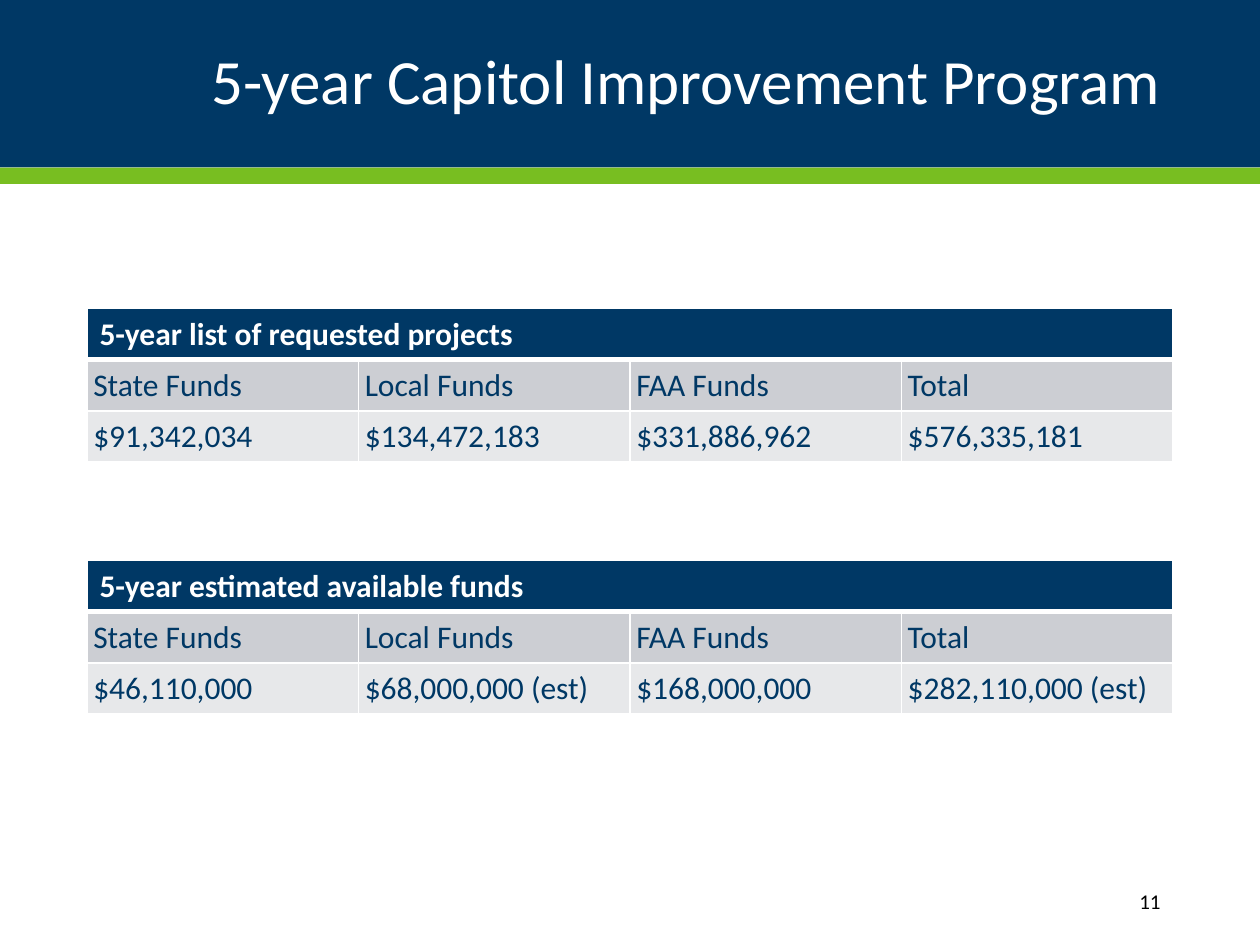
from lxml.etree import SubElement
from pptx import Presentation
from pptx.dml.color import RGBColor
from pptx.enum.shapes import MSO_SHAPE as SHAPE
from pptx.enum.text import MSO_ANCHOR as ANCHOR, PP_ALIGN as ALIGN
from pptx.oxml.ns import qn
from pptx.util import Inches, Pt

COLORS = {"navy": "003865", "green": "78BE21", "white": "FFFFFF",
          "label": "CCCED3", "amount": "E7E8EA", "black": "000000"}
FONT = "Calibri"
WIDTH, HEIGHT = 10, 7.5
MARGIN = 0.69
CONTENT_W = WIDTH - 2 * MARGIN
ROW_H = 0.4
LABELS = ["State Funds", "Local Funds", "FAA Funds", "Total"]
FUND_TABLES = [
    (2.45, "5-year list of requested projects",
     ["$91,342,034", "$134,472,183", "$331,886,962", "$576,335,181"]),
    (4.45, "5-year estimated available funds",
     ["$46,110,000", "$68,000,000 (est)", "$168,000,000", "$282,110,000 (est)"]),
]


def rgb(name):
    return RGBColor.from_string(COLORS[name])


def set_text(tf, text, size, color, bold=False, align=ALIGN.LEFT):
    tf.text = text
    p = tf.paragraphs[0]
    p.alignment = align
    font = p.runs[0].font
    font.name, font.size, font.bold = FONT, Pt(size), bold
    font.color.rgb = rgb(color)
    return p


def add_band(slide, top, height, color):
    s = slide.shapes.add_shape(SHAPE.RECTANGLE, 0, Inches(top),
                               Inches(WIDTH), Inches(height))
    s.shadow.inherit = False
    s.fill.solid()
    s.fill.fore_color.rgb = rgb(color)
    s.line.fill.background()


def set_title(slide, text):
    title = slide.shapes.title
    title.left, title.top = Inches(MARGIN), Inches(0.17)
    title.width, title.height = Inches(CONTENT_W), Inches(1)
    title.text_frame.vertical_anchor = ANCHOR.MIDDLE
    p = set_text(title.text_frame, text, 36, "white", align=ALIGN.RIGHT)
    p.line_spacing = 0.9
    # Bring the title in front of the bands
    slide.shapes._spTree.append(title._element)


def set_borders(cell, top=1, bottom=1):
    tc_pr = cell._tc.get_or_add_tcPr()
    for side, width in (("L", 1), ("R", 1), ("T", top), ("B", bottom)):
        ln = SubElement(tc_pr, qn(f"a:ln{side}"), w=str(Pt(width)))
        fill = SubElement(ln, qn("a:solidFill"))
        SubElement(fill, qn("a:srgbClr"), val=COLORS["white"])


def format_cell(cell, fill):
    cell.fill.solid()
    cell.fill.fore_color.rgb = rgb(fill)


def add_fund_table(slide, top, heading, amounts):
    table = slide.shapes.add_table(3, len(LABELS), Inches(MARGIN), Inches(top),
                                   Inches(CONTENT_W), Inches(3 * ROW_H)).table
    # Heading across all columns
    table.cell(0, 0).merge(table.cell(0, len(LABELS) - 1))
    set_text(table.cell(0, 0).text_frame, heading, 18, "white", bold=True)
    for cell in table.rows[0].cells:
        set_borders(cell, bottom=3)
        format_cell(cell, "navy")
    # Labels and amounts
    for row, (texts, fill) in enumerate([(LABELS, "label"), (amounts, "amount")], 1):
        for col, text in enumerate(texts):
            cell = table.cell(row, col)
            cell.margin_left = cell.margin_right = Inches(0.05)
            cell.margin_top = cell.margin_bottom = Inches(0.05)
            set_text(cell.text_frame, text, 18, "navy")
            set_borders(cell, top=3 if row == 1 else 1)
            format_cell(cell, fill)


def add_page_number(slide, number):
    width = 1.2
    box = slide.shapes.add_textbox(Inches(WIDTH - MARGIN - width), Inches(6.95),
                                   Inches(width), Inches(0.4))
    tf = box.text_frame
    tf.word_wrap = True
    tf.vertical_anchor = ANCHOR.MIDDLE
    set_text(tf, number, 12, "black", align=ALIGN.RIGHT)


def main():
    prs = Presentation()
    prs.slide_width, prs.slide_height = Inches(WIDTH), Inches(HEIGHT)
    slide = prs.slides.add_slide(prs.slide_layouts[5])

    # Header
    add_band(slide, 0, 1.33, "navy")
    add_band(slide, 1.33, 0.13, "green")
    set_title(slide, "5-year Capitol Improvement Program")

    # Body
    for top, heading, amounts in FUND_TABLES:
        add_fund_table(slide, top, heading, amounts)
    add_page_number(slide, "11")
    prs.save("out.pptx")


if __name__ == "__main__":
    main()
